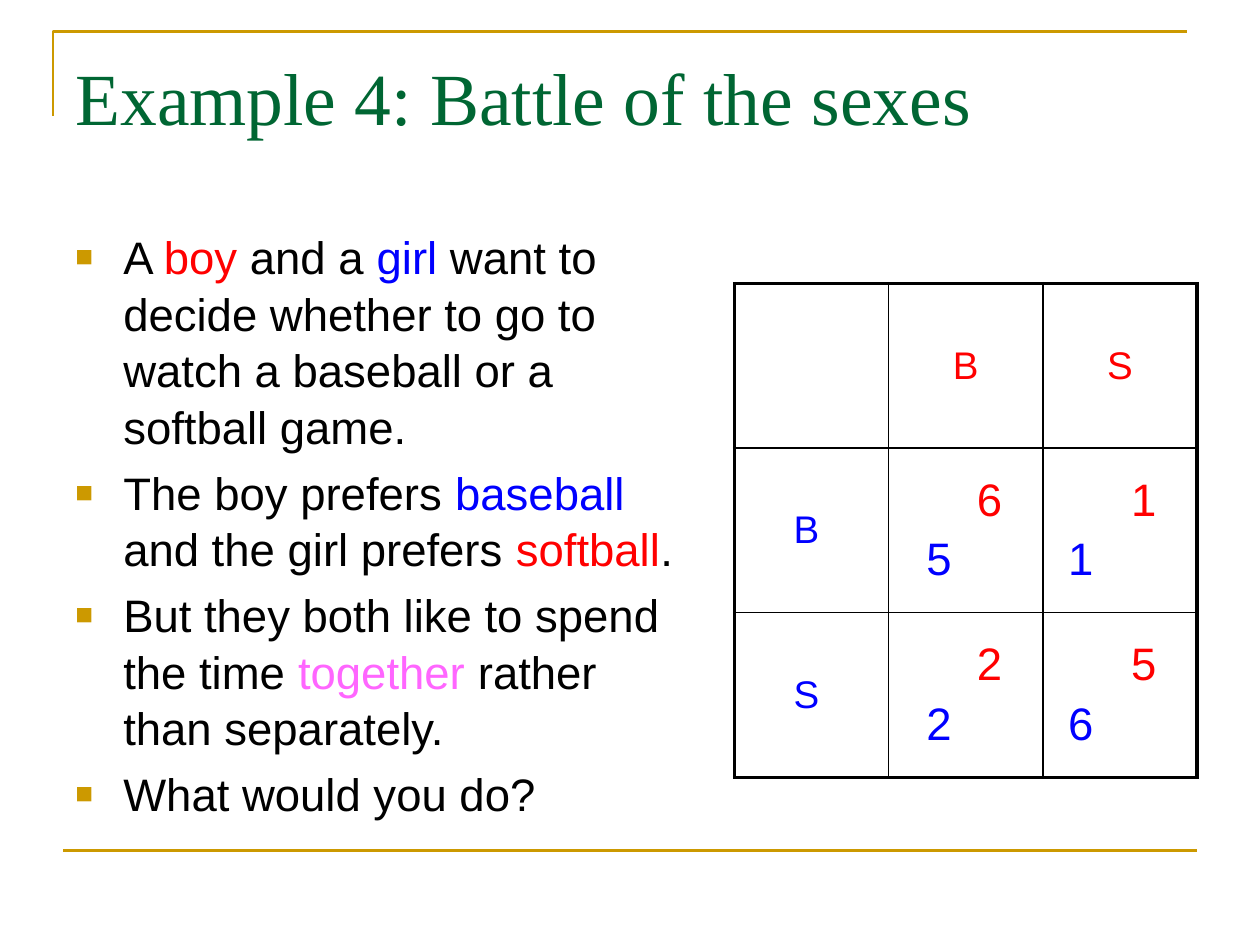
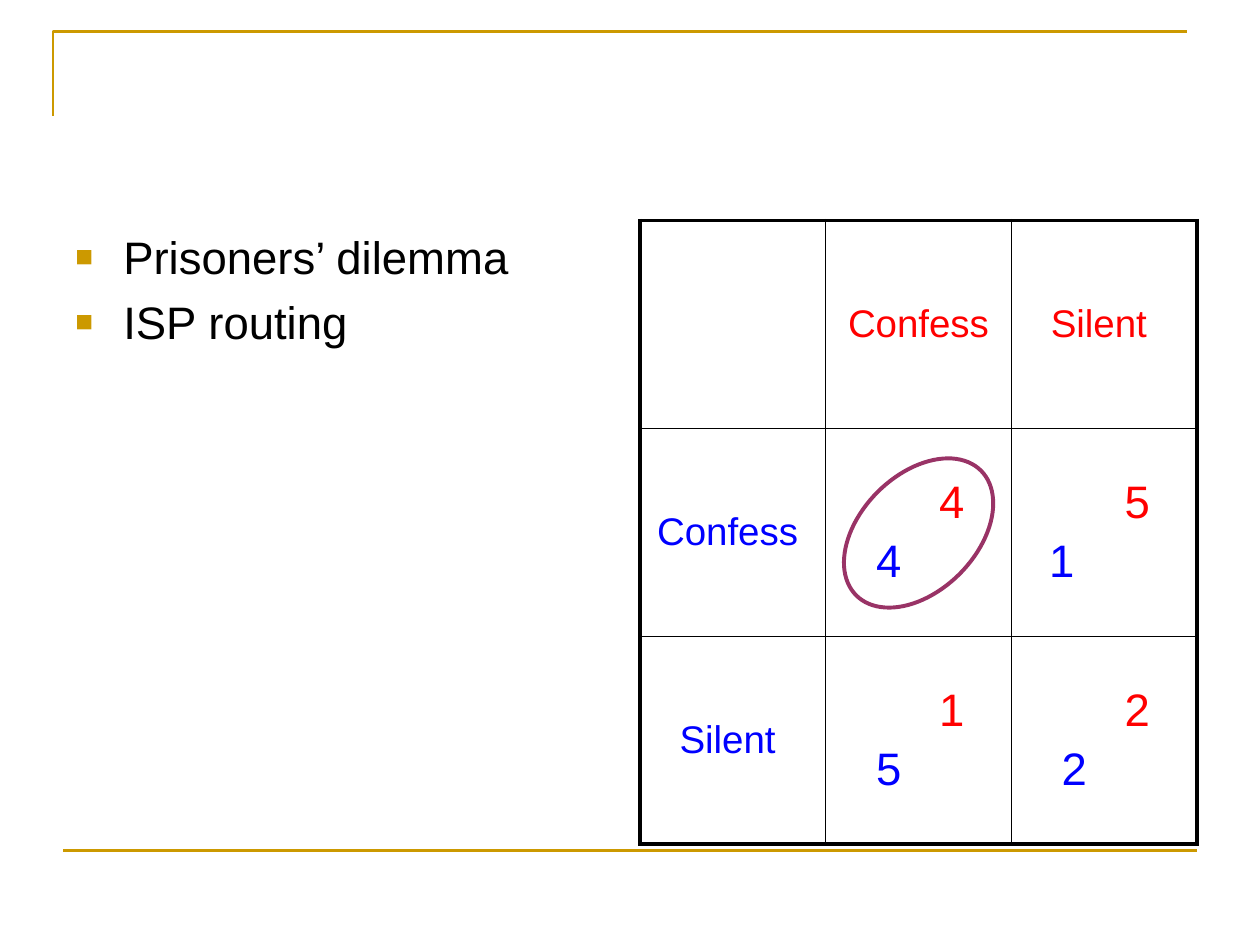
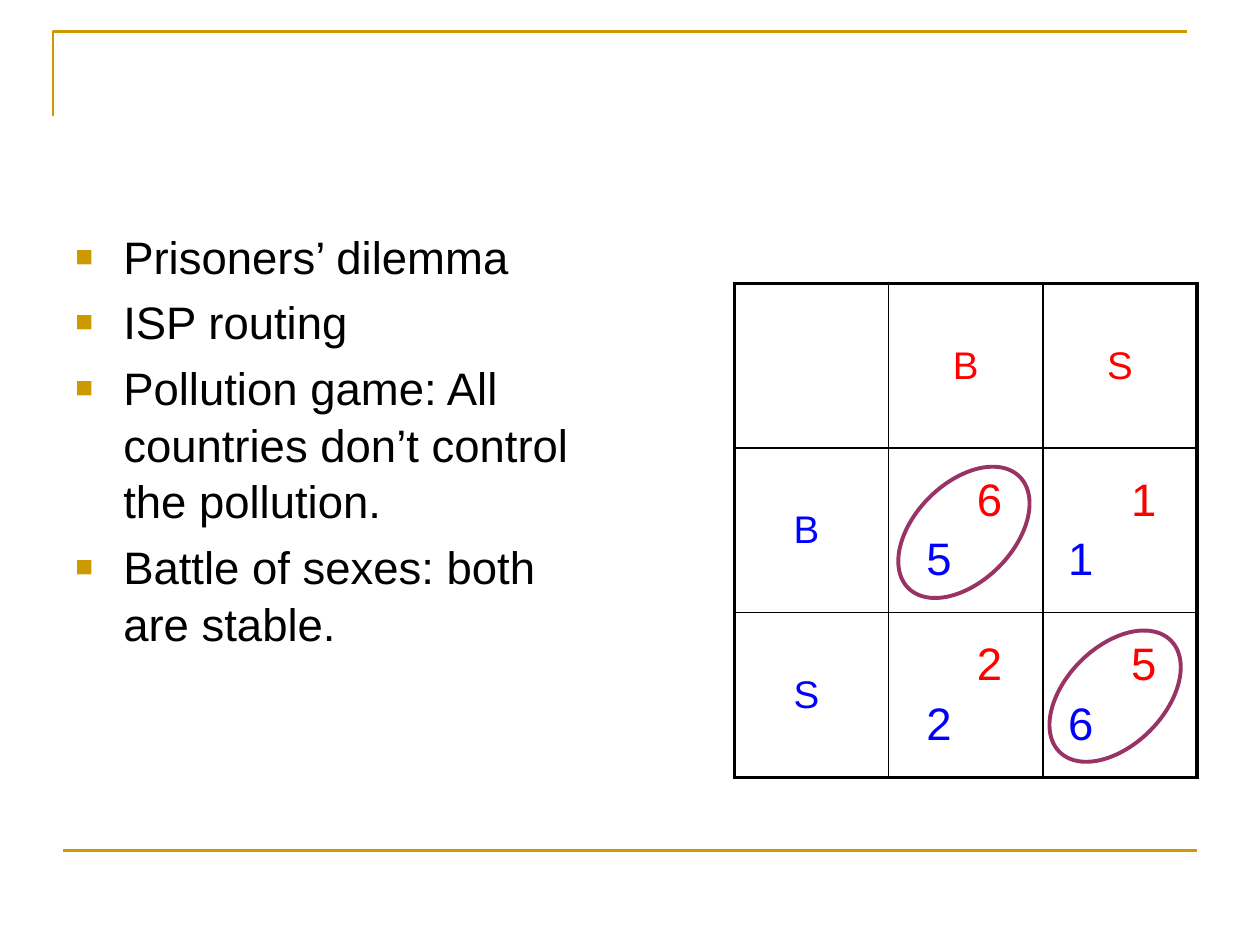
from lxml import etree
from pptx import Presentation
from pptx.dml.color import RGBColor
from pptx.enum.shapes import MSO_CONNECTOR, MSO_SHAPE
from pptx.enum.text import MSO_ANCHOR, PP_ALIGN
from pptx.oxml.ns import qn
from pptx.util import Inches, Pt

LINE = MSO_CONNECTOR.STRAIGHT
ELLIPSE = MSO_SHAPE.OVAL
TOP, MIDDLE = MSO_ANCHOR.TOP, MSO_ANCHOR.MIDDLE
LEFT, CENTER = PP_ALIGN.LEFT, PP_ALIGN.CENTER
TITLE_ONLY, BLANK = 5, 6

GOLD = RGBColor(0xCC, 0x99, 0x00)
GREEN = RGBColor(0x00, 0x66, 0x33)
BLACK = RGBColor(0x00, 0x00, 0x00)
RED = RGBColor(0xFF, 0x00, 0x00)
BLUE = RGBColor(0x00, 0x00, 0xFF)
PINK = RGBColor(0xFF, 0x66, 0xFF)
PLUM = RGBColor(0x99, 0x33, 0x66)

TITLE_FONT, BODY_FONT = "Times New Roman", "Arial"
TITLE_SIZE, BODY_SIZE, LABEL_SIZE = 42, 26, 22
THICK, THIN = 2.25, 1
INDENT = Inches(0.38)
PARAGRAPH_GAP = Pt(5)


def add_run(p, text, size, color, font=BODY_FONT):
    r = p.add_run()
    r.text = text
    r.font.size = Pt(size)
    r.font.name = font
    r.font.color.rgb = color


def add_element(parent, tag, **attributes):
    child = etree.SubElement(parent, qn(tag))
    for name, value in attributes.items():
        child.set(name, str(value))
    return child


def set_bullet(p):
    pPr = p._p.get_or_add_pPr()
    pPr.set("marL", str(INDENT))
    pPr.set("indent", str(-INDENT))
    add_element(add_element(pPr, "a:buClr"), "a:srgbClr", val=GOLD)
    add_element(pPr, "a:buSzPct", val=65000)
    add_element(pPr, "a:buFont", typeface=BODY_FONT)
    add_element(pPr, "a:buChar", char="■")


def set_borders(cell, widths):
    """Draw black borders; widths in points go left, right, top, bottom."""
    tcPr = cell._tc.get_or_add_tcPr()
    for side, width in zip("LRTB", widths):
        ln = add_element(tcPr, f"a:ln{side}", w=Pt(width))
        add_element(add_element(ln, "a:solidFill"), "a:srgbClr", val=BLACK)


class Deck:
    def __init__(self):
        self.prs = Presentation()
        self.prs.slide_width = Inches(10)
        self.prs.slide_height = Inches(7.5)
        self.s = None

    def new_slide(self, title=None):
        layout = TITLE_ONLY if title else BLANK
        self.s = self.prs.slides.add_slide(self.prs.slide_layouts[layout])
        self.frame()
        if title:
            self.title(title)

    def frame(self):
        """Draw the gold corner at the top and the gold rule at the bottom."""
        left, top = Inches(0.42), Inches(0.25)
        builder = self.s.shapes.build_freeform(left, Inches(0.92))
        builder.add_line_segments([(left, top), (Inches(9.42), top)], close=False)
        corner = builder.convert_to_shape()
        corner.shadow.inherit = False
        corner.fill.background()
        y = Inches(6.75)
        rule = self.s.shapes.add_connector(LINE, Inches(0.5), y, Inches(9.5), y)
        add_element(rule._element.spPr, "a:effectLst")
        for sp in (corner, rule):
            sp.line.color.rgb = GOLD
            sp.line.width = Pt(1.5)

    def title(self, text):
        sp = self.s.shapes.title
        sp.left, sp.top = Inches(0.5), Inches(0.3)
        sp.width, sp.height = Inches(9), Inches(1.25)
        tf = sp.text_frame
        tf.vertical_anchor = TOP
        tf.margin_top = Inches(0.11)
        p = tf.paragraphs[0]
        p.alignment = LEFT
        add_run(p, text, TITLE_SIZE, GREEN, TITLE_FONT)

    def bullets(self, items, width=4.42):
        """Each item is a list of strings (black) and (string, colour) pairs."""
        sp = self.s.shapes.add_textbox(Inches(0.5), Inches(1.75),
                                       Inches(width), Inches(4.95))
        tf = sp.text_frame
        tf.word_wrap = True
        for i, item in enumerate(items):
            p = tf.add_paragraph() if i else tf.paragraphs[0]
            p.space_before = PARAGRAPH_GAP
            p.line_spacing = 1.04
            set_bullet(p)
            for part in item:
                text, color = (part, BLACK) if isinstance(part, str) else part
                add_run(p, text, BODY_SIZE, color)

    def game(self, at, columns, rows, payoffs, red_indent):
        """Payoff matrix; each payoff is (red, blue, indent of blue)."""
        table = self.s.shapes.add_table(3, 3, *map(Inches, at)).table
        table.first_row = table.horz_banding = False
        for i in range(3):
            for j in range(3):
                cell = table.cell(i, j)
                set_borders(cell, (THIN if j else THICK, THICK if j == 2 else THIN,
                                   THIN if i else THICK, THICK if i == 2 else THIN))
                cell.fill.background()
                cell.vertical_anchor = MIDDLE
                if i and j:
                    self.payoff(cell, *payoffs[i - 1][j - 1], red_indent)
                elif i:
                    self.label(cell, rows[i - 1], BLUE)
                elif j:
                    self.label(cell, columns[j - 1], RED)

    def label(self, cell, text, color):
        p = cell.text_frame.paragraphs[0]
        p.alignment = CENTER
        p.space_before = PARAGRAPH_GAP
        add_run(p, text, LABEL_SIZE, color)

    def payoff(self, cell, red, blue, blue_indent, red_indent):
        tf = cell.text_frame
        lines = ((tf.paragraphs[0], red, RED, red_indent),
                 (tf.add_paragraph(), blue, BLUE, blue_indent))
        for p, value, color, indent in lines:
            p.space_before = PARAGRAPH_GAP
            p._p.get_or_add_pPr().set("marL", str(Inches(indent)))
            add_run(p, str(value), BODY_SIZE, color)

    def ring(self, left, top, width, height):
        """Mark a stable outcome with a tilted ellipse."""
        sp = self.s.shapes.add_shape(ELLIPSE, Inches(left), Inches(top),
                                     Inches(width), Inches(height))
        sp.rotation = 45
        sp.shadow.inherit = False
        sp.fill.background()
        sp.line.color.rgb = PLUM
        sp.line.width = Pt(THICK)

    def battle_game(self):
        self.game((5.83, 2.25, 3.67, 3.92), ("B", "S"), ("B ", "S "),
                  (((6, 5, 0.2), (1, 1, 0.1)), ((2, 2, 0.2), (5, 6, 0.1))), 0.6)


def main():
    deck = Deck()

    deck.new_slide("Example 4: Battle of the sexes")
    deck.bullets([
        ["A ", ("boy", RED), " and a ", ("girl", BLUE),
         " want to decide whether to go to watch a baseball or a softball game."],
        ["The boy prefers ", ("baseball", BLUE), " and the girl prefers ",
         ("softball", RED), "."],
        ["But they both like to spend the time ", ("together", PINK),
         " rather than separately."],
        ["What would you do?"],
    ], width=5.08)
    deck.battle_game()

    stable_games = [["Prisoners’ dilemma"], ["ISP routing"]]
    deck.new_slide()
    deck.bullets(stable_games)
    deck.game((5.08, 1.75, 4.42, 4.95), ("Confess", "Silent "),
              ("Confess ", "Silent "),
              (((4, 4, 0.3), (5, 1, 0.2)), ((1, 5, 0.3), (2, 2, 0.3))), 0.8)
    deck.ring(6.83, 3.53, 0.92, 1.4)

    deck.new_slide()
    deck.bullets(stable_games + [
        ["Pollution game: All countries don’t control the pollution."],
        ["Battle of sexes: both are stable."],
    ])
    deck.battle_game()
    for left, top in ((7.26, 3.6), (8.46, 4.9)):
        deck.ring(left, top, 0.78, 1.25)

    deck.prs.save("out.pptx")


if __name__ == "__main__":
    main()
